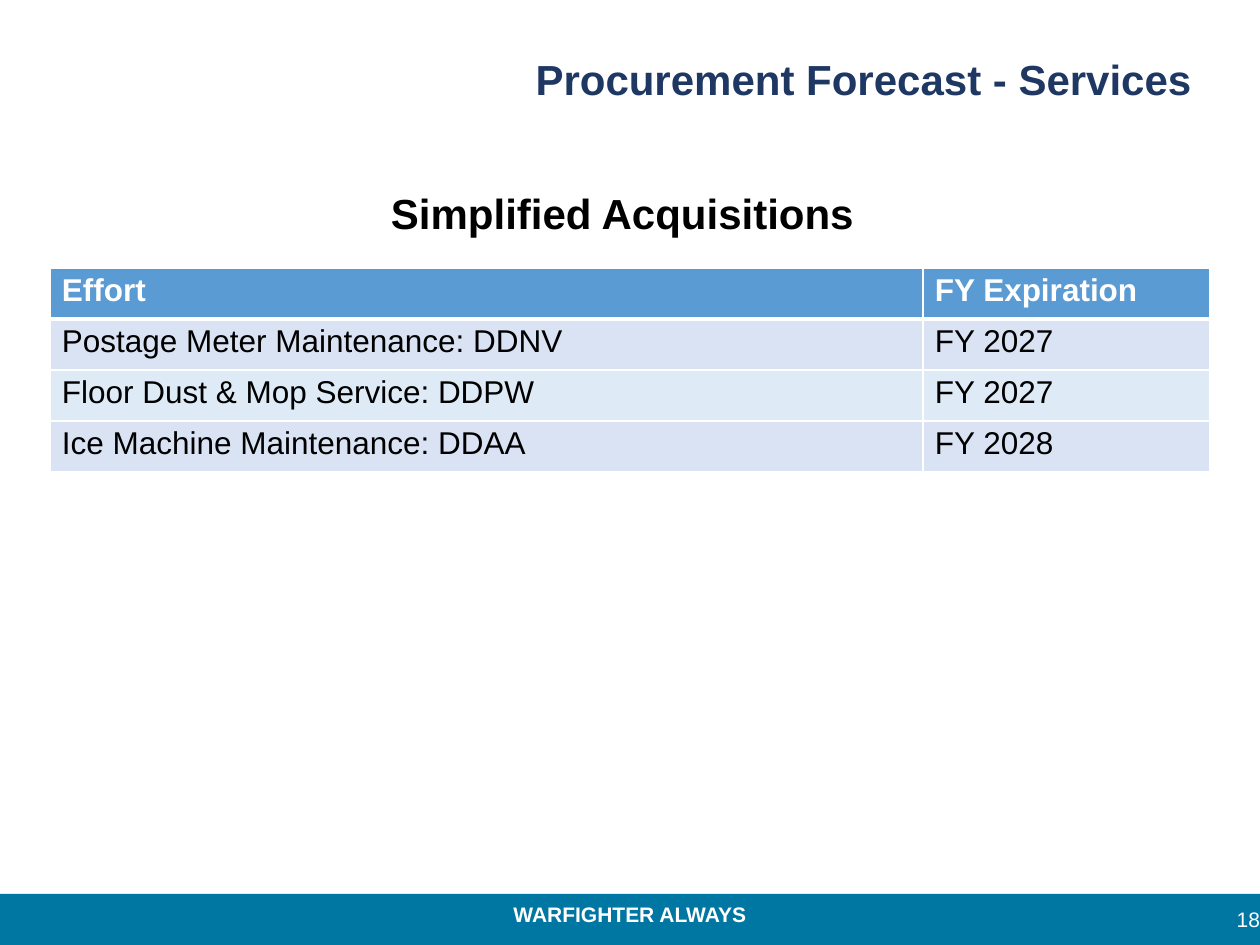
"""Build the simplified acquisitions services forecast slide."""
from lxml import etree
from pptx import Presentation
from pptx.dml.color import RGBColor
from pptx.enum.shapes import MSO_SHAPE
from pptx.enum.text import MSO_ANCHOR, PP_ALIGN
from pptx.oxml.ns import qn
from pptx.util import Pt

RECTANGLE = MSO_SHAPE.RECTANGLE
TOP, MIDDLE = MSO_ANCHOR.TOP, MSO_ANCHOR.MIDDLE
LEFT, CENTER, RIGHT = PP_ALIGN.LEFT, PP_ALIGN.CENTER, PP_ALIGN.RIGHT
TITLE_ONLY = 5
FONT = "Arial"
COLORS = {
    "white": "FFFFFF",
    "black": "000000",
    "navy": "1F3863",
    "teal": "0076A3",
    "header": "5B9BD4",
    "odd": "DAE3F3",
    "even": "DEEBF7",
}
EFFORTS = [
    ("Effort", "FY Expiration"),
    ("Postage Meter Maintenance: DDNV", "FY 2027"),
    ("Floor Dust & Mop Service: DDPW", "FY 2027"),
    ("Ice Machine Maintenance: DDAA", "FY 2028"),
]


def px(length):
    return round(length * 914400 / 126)


def rgb(name):
    return RGBColor.from_string(COLORS[name])


class ForecastSlide:
    def __init__(self, deck):
        self.slide = deck.slides.add_slide(deck.slide_layouts[TITLE_ONLY])

    def set_text(self, frame, text, size, color, bold=False, align=LEFT):
        frame.text = text
        paragraph = frame.paragraphs[0]
        paragraph.alignment = align
        font = paragraph.runs[0].font
        font.name, font.size, font.bold = FONT, Pt(size), bold
        font.color.rgb = rgb(color)

    def inset(self, holder, left, top, right, bottom):
        holder.margin_left, holder.margin_top = px(left), px(top)
        holder.margin_right, holder.margin_bottom = px(right), px(bottom)

    def title(self, box, text):
        title = self.slide.shapes.title
        title.left, title.top, title.width, title.height = map(px, box)
        frame = title.text_frame
        frame.word_wrap = True
        frame.vertical_anchor = TOP
        self.inset(frame, 0, 5, 0, 0)
        self.set_text(frame, text, 24, "navy", True, CENTER)

    def band(self, box, color):
        band = self.slide.shapes.add_shape(RECTANGLE, *map(px, box))
        band.shadow.inherit = False
        band.fill.solid()
        band.fill.fore_color.rgb = rgb(color)
        band.line.fill.background()

    def label(self, box, text, size, color, bold=False, align=LEFT,
              anchor=TOP, insets=(0, 0, 0, 0)):
        frame = self.slide.shapes.add_textbox(*map(px, box)).text_frame
        frame.word_wrap = True
        frame.vertical_anchor = anchor
        self.inset(frame, *insets)
        self.set_text(frame, text, size, color, bold, align)

    def border(self, cell, side, points):
        line = etree.SubElement(cell._tc.get_or_add_tcPr(), qn(f"a:ln{side}"),
                                w=str(Pt(points)))
        fill = etree.SubElement(line, qn("a:solidFill"))
        etree.SubElement(fill, qn("a:srgbClr"), val=COLORS["white"])

    def table(self, left, top, widths, row_height, rows):
        table = self.slide.shapes.add_table(
            len(rows), len(widths), px(left), px(top),
            px(sum(widths)), px(row_height * len(rows))).table
        for column, width in zip(table.columns, widths):
            column.width = px(width)
        for index, values in enumerate(rows):
            table.rows[index].height = px(row_height)
            header = index == 0
            fill = "header" if header else ("even", "odd")[index % 2]
            for column, value in enumerate(values):
                cell = table.cell(index, column)
                self.inset(cell, 12, 5, 0, 0)
                self.set_text(cell.text_frame, value, 18,
                              "white" if header else "black", header)
                self.border(cell, "L", 1)
                self.border(cell, "R", 1)
                self.border(cell, "T", 3 if index == 1 else 1)
                self.border(cell, "B", 3 if header else 1)
                cell.fill.solid()
                cell.fill.fore_color.rgb = rgb(fill)


def main():
    deck = Presentation()
    deck.slide_width, deck.slide_height = px(1260), px(945)
    forecast = ForecastSlide(deck)
    forecast.band((0, 894, 1260, 51), "teal")
    forecast.label((0, 896, 1260, 38), "WARFIGHTER ALWAYS", 12, "white",
                   True, CENTER, insets=(12, 6, 12, 6))
    forecast.label((1197, 894, 63, 51), "18", 12, "white",
                   align=RIGHT, anchor=MIDDLE)
    forecast.label((390, 183, 482, 53), "Simplified Acquisitions", 24, "black",
                   True, insets=(1, 5, 0, 0))
    forecast.table(50, 268, (873, 287), 51, EFFORTS)
    forecast.title((452, 48, 823, 53), "Procurement Forecast - Services")
    deck.save("out.pptx")


if __name__ == "__main__":
    main()
